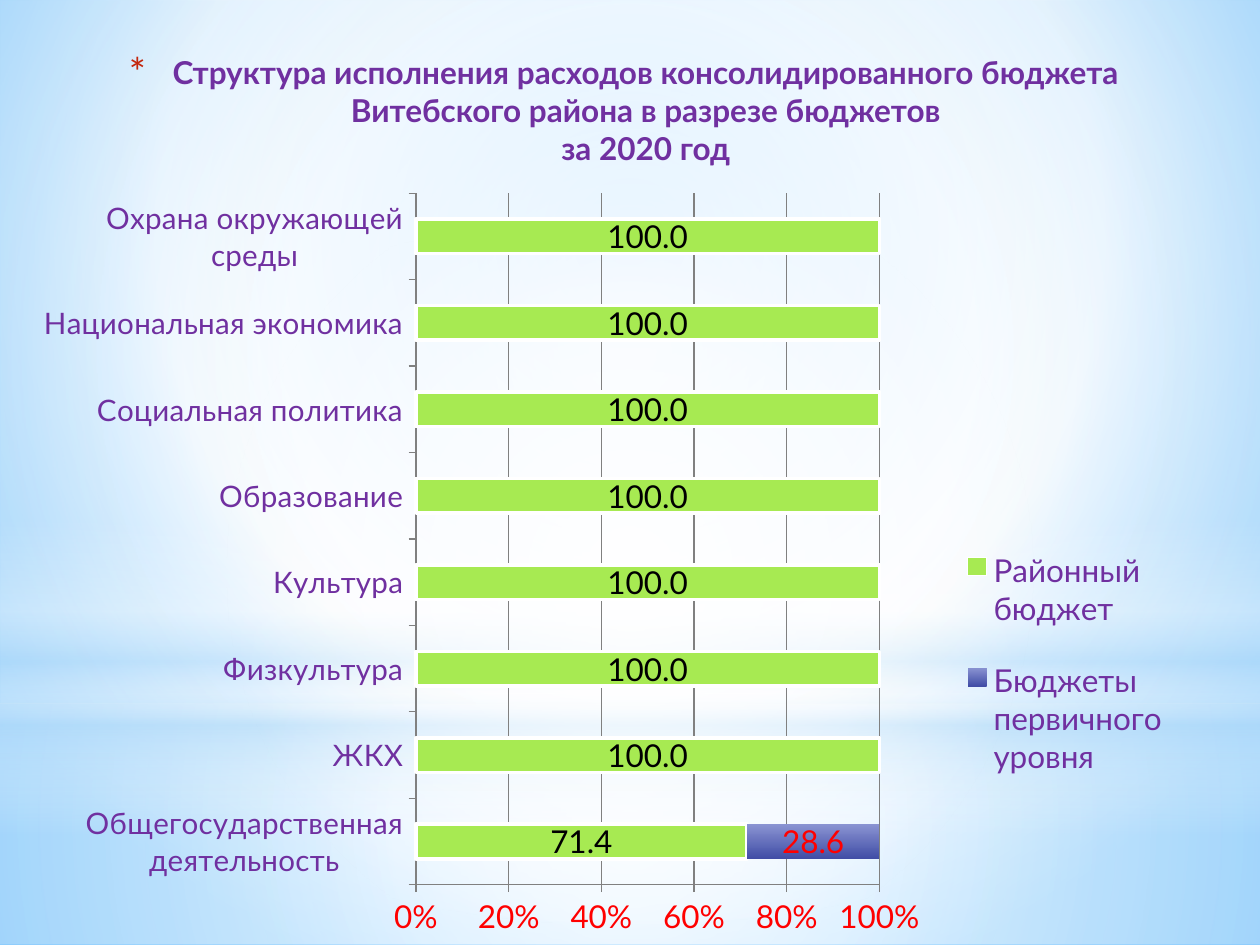
from lxml import etree
from pptx import Presentation
from pptx.chart.data import CategoryChartData
from pptx.dml.color import RGBColor
from pptx.enum.chart import XL_CHART_TYPE, XL_LEGEND_POSITION, XL_TICK_MARK
from pptx.enum.shapes import MSO_SHAPE
from pptx.enum.text import MSO_ANCHOR, MSO_AUTO_SIZE, PP_ALIGN
from pptx.oxml import parse_xml
from pptx.util import Pt

RECT, OVAL = MSO_SHAPE.RECTANGLE, MSO_SHAPE.OVAL
OUTSIDE = XL_TICK_MARK.OUTSIDE
A = "http://schemas.openxmlformats.org/drawingml/2006/main"
C = "http://schemas.openxmlformats.org/drawingml/2006/chart"
FONT = "Lato"
PURPLE, RED, GRAY = "7030A0", "FF0000", "808080"


def rgb(value):
    return RGBColor.from_string(value)


def set_gradient(fill, parent, stops, shade):
    fill.solid()
    gs = "".join(
        f'<a:gs pos="{pos * 1000}"><a:srgbClr val="{color}">'
        f'<a:alpha val="{alpha * 1000}"/></a:srgbClr></a:gs>'
        for pos, color, alpha in stops)
    old = parent.find(f"{{{A}}}solidFill")
    parent.replace(old, parse_xml(
        f'<a:gradFill xmlns:a="{A}" rotWithShape="1"><a:gsLst>{gs}</a:gsLst>{shade}</a:gradFill>'))


circle = ('<a:path path="circle"><a:fillToRect l="{}000" t="{}000" '
          'r="{}000" b="{}000"/></a:path>')
centre = circle.format(50, 50, 50, 50)
down = '<a:lin ang="5400000" scaled="0"/>'

prs = Presentation()
prs.slide_width, prs.slide_height = Pt(720), Pt(540)
s = prs.slides.add_slide(prs.slide_layouts[5])

bg_fill = s.background.fill
bg_fill.solid()
set_gradient(bg_fill, s.element.cSld.bg.bgPr,
             [(0, "9ED5FF", 100), (60, "FFFFFF", 100), (100, "5BB9FF", 100)],
             circle.format(20, 10, 20, 60))

glows = [
    (RECT, 402, 138, centre, [(0, "FFFFFF", 91), (37, "FFFFFF", 76), (100, "B4DCFA", 79)]),
    (RECT, 0, 402, centre, [(0, "FFFFFF", 89), (48, "FFFFFF", 62), (100, "B4DCFA", 79)]),
    (RECT, 297, 180, down, [(0, "FFFFFF", 0), (29, "FFFFFF", 30), (45, "B4DCFA", 40),
                            (55, "FFFFFF", 26), (65, "B4DCFA", 60), (100, "FFFFFF", 0)]),
    (OVAL, 126, 402, centre, [(0, "FFFFFF", 100), (56, "FFFFFF", 0)]),
]
for kind, top, height, shade, stops in glows:
    sp = s.shapes.add_shape(kind, 0, Pt(top), Pt(720), Pt(height))
    sp.shadow.inherit = False
    sp.line.fill.background()
    set_gradient(sp.fill, sp.element.spPr, stops, shade)

title = s.shapes.title
title.left, title.top, title.width, title.height = Pt(25), Pt(26), Pt(663), Pt(73.5)
s.shapes.element.append(title.element)
tf = title.text_frame
tf.auto_size = MSO_AUTO_SIZE.NONE
tf.vertical_anchor = MSO_ANCHOR.MIDDLE
p = tf.paragraphs[0]
p.text = ("Структура исполнения расходов консолидированного бюджета\v"
          "Витебского района в разрезе бюджетов\vза 2020 год")
p.alignment = PP_ALIGN.CENTER
p.font.name, p.font.size, p.font.bold = FONT, Pt(18), True
p.font.color.rgb = rgb(PURPLE)
for r in p.runs:
    r.font.size, r.font.bold = Pt(18), True
pPr = p._p.get_or_add_pPr()
pPr.set("marL", str(Pt(25)))
pPr.set("indent", str(-Pt(25)))
bullet = parse_xml(
    f'<a:pPr xmlns:a="{A}"><a:buClr><a:srgbClr val="C3260C"/></a:buClr>'
    '<a:buSzPct val="128000"/><a:buFont typeface="Lato"/><a:buChar char="*"/></a:pPr>')
for i, child in enumerate(list(bullet)):
    pPr.insert(i, child)

data = CategoryChartData(number_format="0.0")
data.categories = ["Общегосударственная деятельность", "ЖКХ", "Физкультура", "Культура",
                   "Образование", "Социальная политика", "Национальная экономика",
                   "Охрана окружающей среды"]
data.add_series("Районный бюджет", [71.4] + [100] * 7)
data.add_series("Бюджеты первичного уровня", [28.6] + [None] * 7)
chart = s.shapes.add_chart(XL_CHART_TYPE.BAR_STACKED_100, Pt(25), Pt(110),
                           Pt(663), Pt(430), data).chart
chart.has_title = False
chart.font.name, chart.font.size = FONT, Pt(18)
chart.font.color.rgb = rgb(RED)

cat_axis, val_axis = chart.category_axis, chart.value_axis
for axis in (cat_axis, val_axis):
    axis.major_tick_mark = OUTSIDE
    axis.format.line.color.rgb = rgb(GRAY)
cat_axis.tick_labels.font.size = Pt(16.9)
cat_axis.tick_labels.font.name = FONT
cat_axis.tick_labels.font.color.rgb = rgb(PURPLE)
val_axis.minimum_scale, val_axis.maximum_scale, val_axis.major_unit = 0, 1, 0.2
val_axis.tick_labels.number_format = "0%"
val_axis.tick_labels.number_format_is_linked = False
val_axis.has_major_gridlines = True
val_axis.major_gridlines.format.line.color.rgb = rgb(GRAY)

plot = chart.plots[0]
plot.gap_width, plot.overlap = 150, 100
district, primary = plot.series
district.format.fill.solid()
district.format.fill.fore_color.rgb = rgb("A7EA52")
district.format.line.color.rgb = rgb("FFFFFF")
district.format.line.width = Pt(2)
primary.format.fill.solid()
set_gradient(primary.format.fill, primary._element.spPr,
             [(0, "8A94D2", 100), (100, "414DA6", 100)], down)
for series, color in ((district, "000000"), (primary, RED)):
    labels = series.data_labels
    labels.show_value = True
    labels.number_format, labels.number_format_is_linked = "0.0", False
    labels.font.name, labels.font.size = FONT, Pt(18)
    labels.font.color.rgb = rgb(color)

chart.has_legend = True
legend = chart.legend
legend.position = XL_LEGEND_POSITION.RIGHT
legend.include_in_layout = False
legend.font.name, legend.font.size = FONT, Pt(18)
legend.font.color.rgb = rgb(PURPLE)

plot_area = chart._chartSpace.chart.plotArea
for old in plot_area.findall(f"{{{C}}}layout"):
    plot_area.remove(old)
for parent, index, target, box in (
        (plot_area, 0, "inner", (0.32, 0, 0.4, 0.92)),
        (legend._element, 1, None, (0.78, 0.43, 0.2, 0.39))):
    for old in parent.findall(f"{{{C}}}layout"):
        parent.remove(old)
    layout = etree.Element(f"{{{C}}}layout")
    manual = etree.SubElement(layout, f"{{{C}}}manualLayout")
    entries = [("layoutTarget", target)] if target else []
    entries += [("xMode", "edge"), ("yMode", "edge")] + list(zip("xywh", box))
    for tag, value in entries:
        etree.SubElement(manual, f"{{{C}}}{tag}", val=str(value))
    parent.insert(index, layout)

prs.save("out.pptx")
